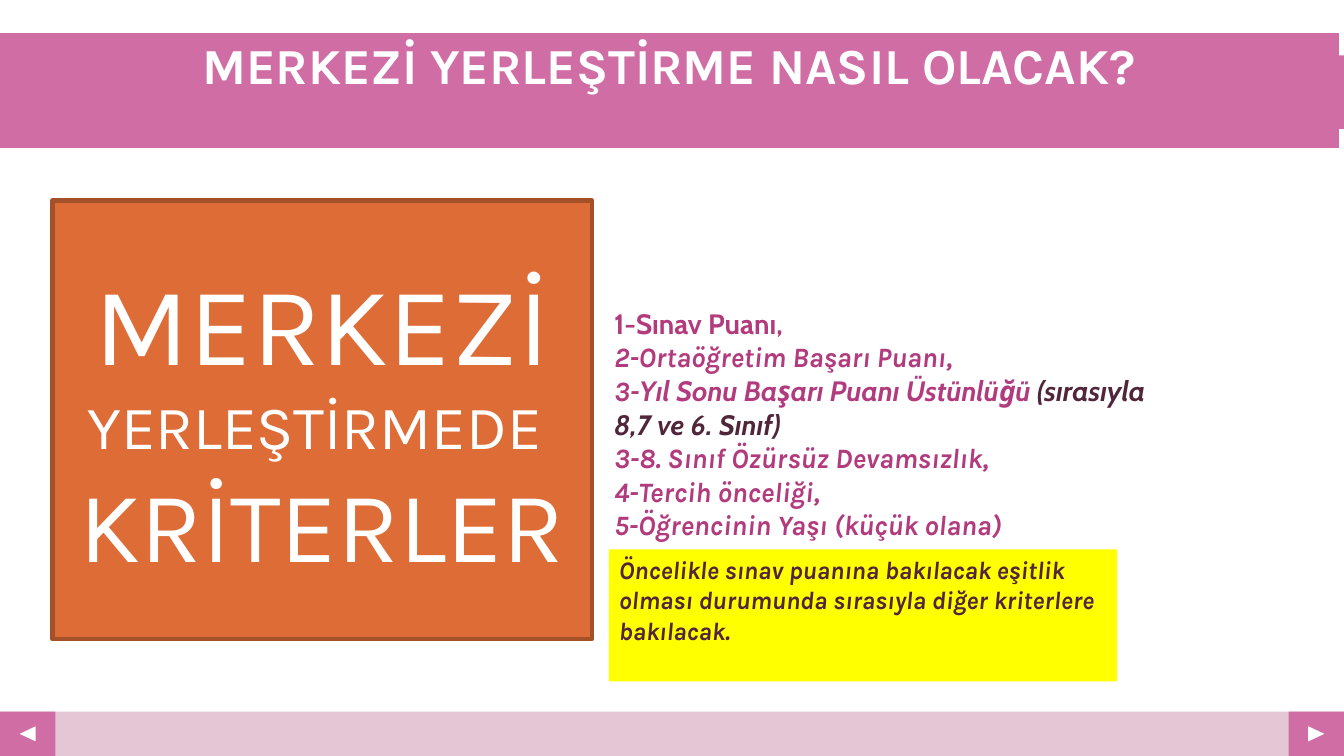
from pptx import Presentation
from pptx.dml.color import RGBColor
from pptx.enum.shapes import MSO_SHAPE
from pptx.enum.text import MSO_ANCHOR, MSO_AUTO_SIZE, PP_ALIGN
from pptx.oxml.xmlchemy import OxmlElement
from pptx.util import Emu, Pt

W, H = 1333, 750
COLORS = {
    "pink": "CF6DA4", "pale": "E5C6D5", "magenta": "B23B7E", "plum": "51253A",
    "orange": "DE6C36", "rust": "A45028", "yellow": "FFFF00", "white": "FFFFFF",
}


def px(n):
    """Convert px, 100 to the inch, into EMU."""
    return Emu(n * 9144)


def rgb(name):
    return RGBColor.from_string(COLORS[name])


def fmt(size, color, name="Karla", bold=False, italic=False):
    return {"size": Pt(size), "color": color, "name": name, "bold": bold, "italic": italic}


def place(shape, box):
    for attr, n in zip(("left", "top", "width", "height"), box):
        setattr(shape, attr, px(n))


def paint(shape, fill, line=None, width=0):
    shape.fill.solid()
    shape.fill.fore_color.rgb = rgb(fill)
    if line:
        shape.line.color.rgb = rgb(line)
        shape.line.width = Pt(width)
    else:
        shape.line.fill.background()


def add_block(s, box, fill, line=None, width=0, kind=MSO_SHAPE.RECTANGLE, rotation=0):
    sp = s.shapes.add_shape(kind, *map(px, box))
    sp.shadow.inherit = False
    sp.rotation = rotation
    paint(sp, fill, line, width)
    return sp


def write(sp, paragraphs, align=PP_ALIGN.LEFT, anchor=MSO_ANCHOR.TOP, insets=(10, 5, 10, 5)):
    """Fill a shape with paragraphs, each a list of (text, format) runs."""
    tf = sp.text_frame
    tf.word_wrap = True
    tf.auto_size = MSO_AUTO_SIZE.NONE
    tf.vertical_anchor = anchor
    for side, n in zip(("left", "top", "right", "bottom"), insets):
        setattr(tf, "margin_" + side, px(n))
    for i, runs in enumerate(paragraphs):
        p = tf.add_paragraph() if i else tf.paragraphs[0]
        p.alignment = align
        p.space_before = Pt(0)
        for text, values in runs:
            r = p.add_run()
            r.text = text
            for attr, value in values.items():
                if attr == "color":
                    r.font.color.rgb = rgb(value)
                else:
                    setattr(r.font, attr, value)


def remove_bullets(sp):
    for p in sp.text_frame.paragraphs:
        pPr = p._p.get_or_add_pPr()
        pPr.set("marL", "0")
        pPr.set("indent", "0")
        pPr.append(OxmlElement("a:buNone"))


def add_navigation(s):
    top, height, button = 706, 44, 55
    add_block(s, (0, top, W, height), "pale")
    for left, rotation in ((0, 270), (W - button, 90)):
        add_block(s, (left, top, button, height), "pink")
        add_block(s, (left + 20, top + 14, 15, 16), "white",
                  kind=MSO_SHAPE.ISOSCELES_TRIANGLE, rotation=rotation)


def add_title(s):
    title = s.shapes.title
    place(title, (-3, 31, W, 118))
    paint(title, "pink", "white", 2.5)
    write(title, [[("MERKEZİ YERLEŞTİRME NASIL OLACAK?", fmt(36, "white", bold=True))]],
          PP_ALIGN.CENTER, insets=(5, 3, 5, 0))


def add_criteria(s):
    karla = fmt(20, "magenta", bold=True, italic=True)
    cabin = {**karla, "name": "Cabin"}
    body = s.placeholders[1]
    place(body, (596, 296, 591, 249))
    write(body, [
        [("1-Sınav Puanı,", {**cabin, "italic": False})],
        [("2-Ortaöğretim Başarı Puanı,", karla)],
        [("3-", karla), ("Yıl Sonu Başarı Puanı Üstünlüğü ", cabin),
         ("(sırasıyla 8,7 ve 6. Sınıf)", {**cabin, "color": "plum"})],
        [("3-8. Sınıf Özürsüz Devamsızlık,", karla)],
        [("4-Tercih önceliği,", karla)],
        [("5-Öğrencinin Yaşı (küçük olana)", karla)],
    ], anchor=MSO_ANCHOR.MIDDLE, insets=(13, 7, 13, 7))
    remove_bullets(body)


def add_heading_panel(s):
    add_block(s, (52, 199, 535, 435), "orange", "rust", 3.15)
    heading = s.shapes.add_textbox(*map(px, (52, 247, 535, 340)))
    write(heading, [
        [("MERKEZİ", fmt(80, "white")), (" YERLEŞTİRMEDE ", fmt(44, "white"))],
        [("KRİTERLER", fmt(72, "white"))],
    ], PP_ALIGN.CENTER)


def add_note(s):
    note = add_block(s, (604, 545, 504, 131), "yellow")
    text = ("Öncelikle sınav puanına bakılacak eşitlik olması durumunda "
            "sırasıyla diğer kriterlere bakılacak.")
    write(note, [[(text, fmt(18, "plum", bold=True, italic=True))]])


def main():
    prs = Presentation()
    prs.slide_width, prs.slide_height = px(W), px(H)
    s = prs.slides.add_slide(prs.slide_layouts[1])
    add_navigation(s)
    add_block(s, (1326, 55, 9, 73), "pink")
    add_title(s)
    add_criteria(s)
    add_heading_panel(s)
    add_note(s)
    prs.save("out.pptx")


if __name__ == "__main__":
    main()
